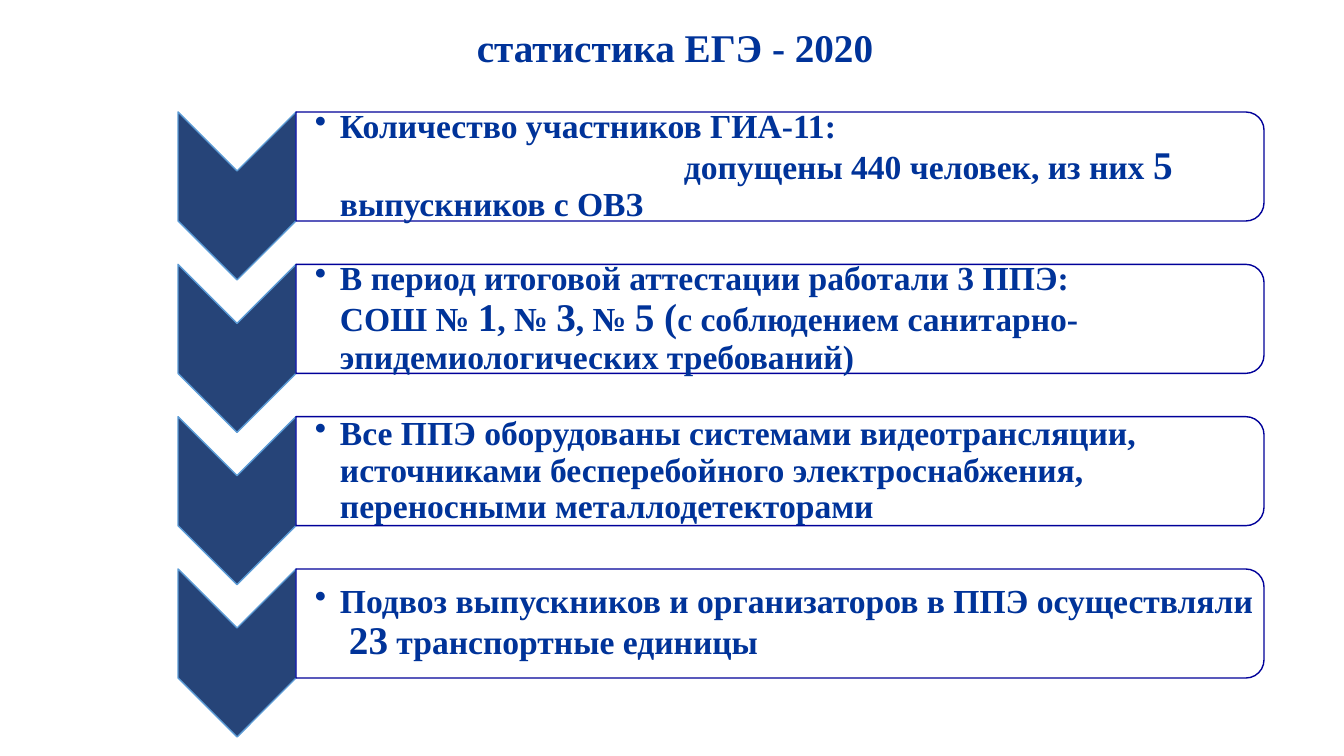
from pptx import Presentation
from pptx.util import Pt
from pptx.dml.color import RGBColor
from pptx.enum.shapes import MSO_SHAPE as Shape
from pptx.enum.text import PP_ALIGN as Align, MSO_ANCHOR as Anchor
from pptx.oxml.ns import qn
from lxml.etree import SubElement

# Content: each item holds lines of (first-line indent in px, runs of (text, size))
TITLE = "статистика ЕГЭ - 2020"
ITEMS = [
    [(0, [("Количество участников ГИА-11:", 24)]),
     (344, [("допущены 440 человек, из них ", 24), ("5", 28),
            (" выпускников с ОВЗ", 24)])],
    [(0, [("В период итоговой аттестации работали 3 ППЭ:", 24)]),
     (0, [("СОШ № ", 24), ("1", 28), (", № ", 24), ("3", 28), (", № ", 24),
          ("5 (", 28),
          ("с соблюдением санитарно-эпидемиологических требований)", 24)])],
    [(0, [("Все ППЭ оборудованы системами видеотрансляции, источниками "
           "бесперебойного электроснабжения, переносными "
           "металлодетекторами", 24)])],
    [(0, [("Подвоз выпускников и организаторов в ППЭ осуществляли", 24)]),
     (9, [("23", 28), (" транспортные единицы", 24)])],
]

# Colours and font
INK = RGBColor(0x00, 0x33, 0x99)
NAVY = RGBColor(0x26, 0x44, 0x78)
SKY = RGBColor(0x5B, 0x9B, 0xD5)
EDGE = RGBColor(0x00, 0x00, 0x99)
WHITE = RGBColor(0xFF, 0xFF, 0xFF)
FONT = "Times New Roman"

# Layout in px
TOP, SPAN = 112, 457
LEFT, ARROW_W, ARROW_H = 178, 118, 168
BOX_W, BOX_H = 968, 109
TEXT_W, TEXT_H = 963, 99
HANG = 25


def px(n):
    return round(n * 914400 / 100.8)


prs = Presentation()
prs.slide_width, prs.slide_height = px(1344), px(756)
slide = prs.slides.add_slide(prs.slide_layouts[6])


def add_turned(kind, x, y, w, h, fill, line):
    """Add a shape turned by 90 degrees that covers the area x, y, w, h."""
    shape = slide.shapes.add_shape(
        kind, px(x + (w - h) / 2), px(y + (h - w) / 2), px(h), px(w))
    shape.rotation = 90
    shape.shadow.inherit = False
    shape.fill.solid()
    shape.fill.fore_color.rgb = fill
    shape.line.color.rgb = line
    shape.line.width = Pt(1)
    return shape


def add_text(lines, x, y, w, h, align=Align.LEFT, bullet=False,
             inset=(0, 0, 0, 0)):
    frame = slide.shapes.add_textbox(px(x), px(y), px(w), px(h)).text_frame
    frame.word_wrap = True
    frame.vertical_anchor = Anchor.MIDDLE
    (frame.margin_left, frame.margin_top,
     frame.margin_right, frame.margin_bottom) = map(px, inset)
    for i, (indent, runs) in enumerate(lines):
        para = frame.add_paragraph() if i else frame.paragraphs[0]
        para.alignment = align
        para.line_spacing = 0.9
        if bullet:
            props = para._p.get_or_add_pPr()
            props.set("marL", str(px(HANG)))
            props.set("indent", str(px(indent if i else -HANG)))
            if i:
                SubElement(props, qn("a:buNone"))
            else:
                SubElement(props, qn("a:buChar")).set("char", "•")
        for text, size in runs:
            run = para.add_run()
            run.text = text
            run.font.name = FONT
            run.font.size = Pt(size)
            run.font.bold = True
            run.font.color.rgb = INK


# Title
add_text([(0, [(TITLE, 28)])], 247, 31, 856, 38, align=Align.CENTER)

# Rows: chevron, frame, bulleted text
for i, lines in enumerate(ITEMS):
    y = TOP + SPAN * i / (len(ITEMS) - 1)
    x = LEFT + ARROW_W
    add_turned(Shape.CHEVRON, LEFT, y, ARROW_W, ARROW_H, NAVY, SKY)
    box = add_turned(Shape.ROUND_2_SAME_RECTANGLE, x, y, BOX_W, BOX_H,
                     WHITE, EDGE)
    tint = box._element.spPr.find(qn("a:solidFill"))[0]
    SubElement(tint, qn("a:alpha")).set("val", "90000")
    add_text(lines, x, y + (BOX_H - TEXT_H) / 2, TEXT_W, TEXT_H,
             bullet=True, inset=(19, 2, 2, 2))

prs.save("out.pptx")
